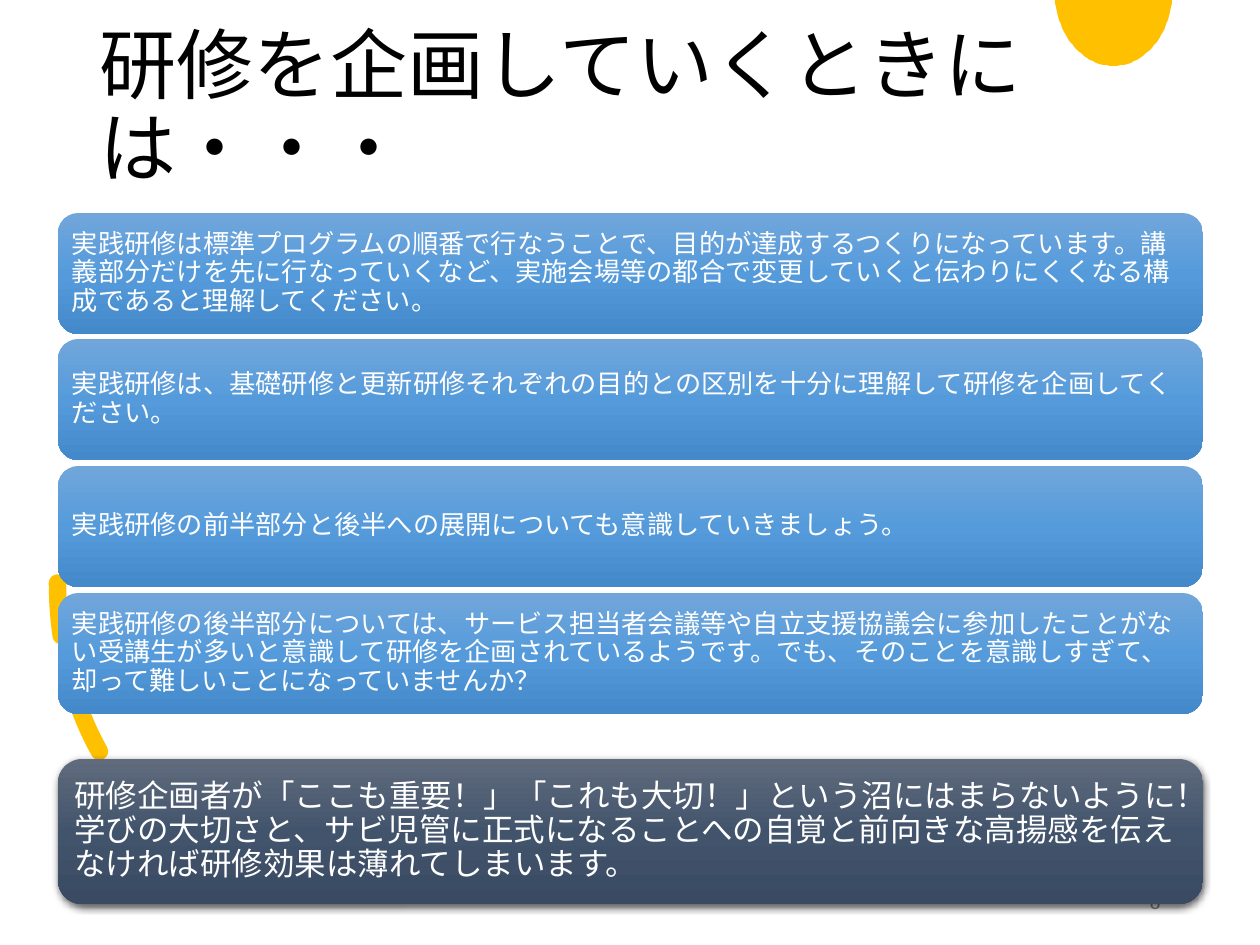
from copy import deepcopy
from dataclasses import dataclass

from lxml import etree
from pptx import Presentation
from pptx.dml.color import RGBColor
from pptx.enum.dml import MSO_LINE
from pptx.enum.shapes import MSO_SHAPE
from pptx.enum.text import MSO_ANCHOR, MSO_AUTO_SIZE, PP_ALIGN
from pptx.oxml.ns import qn
from pptx.util import Pt

ROUNDED = MSO_SHAPE.ROUNDED_RECTANGLE
ARC = MSO_SHAPE.ARC
DASH = MSO_LINE.DASH
MIDDLE = MSO_ANCHOR.MIDDLE
NO_FIT = MSO_AUTO_SIZE.NONE
LEFT, RIGHT = PP_ALIGN.LEFT, PP_ALIGN.RIGHT
TITLE_ONLY = 5
PX = 914400 // 126


@dataclass(frozen=True)
class Theme:
    font: str = "Calibri"
    title_size: int = 44
    point_size: int = 15
    summary_size: int = 18
    number_size: int = 12
    ink: str = "000000"
    white: str = "FFFFFF"
    grey: str = "8C8C8C"
    accent: str = "FFC000"
    blue: tuple = ("71A6DB", "559BDB", "448ACA")
    slate: tuple = ("606B7D", "42546C", "394A62")


def bezier(start, control_1, control_2, end, steps=24):
    """Points along a cubic curve, without its start."""
    for step in range(1, steps + 1):
        t = step / steps
        weights = ((1 - t) ** 3, 3 * t * (1 - t) ** 2, 3 * t * t * (1 - t), t ** 3)
        corners = (start, control_1, control_2, end)
        yield tuple(sum(w * c[axis] for w, c in zip(weights, corners)) for axis in (0, 1))


class SlideBuilder:
    def __init__(self, slide, theme):
        self.slide = slide
        self.theme = theme

    def set_text(self, frame, text, size, color, align=LEFT, inset=None, spacing=0.9):
        frame.text = text
        frame.word_wrap = True
        frame.auto_size = NO_FIT
        frame.vertical_anchor = MIDDLE
        if inset is not None:
            frame.margin_left = frame.margin_right = inset * PX
            frame.margin_top = frame.margin_bottom = inset * PX
        paragraph = frame.paragraphs[0]
        paragraph.alignment = align
        paragraph.line_spacing = spacing
        font = paragraph.runs[0].font
        font.name = self.theme.font
        font.size = Pt(size)
        font.color.rgb = RGBColor.from_string(color)

    def title(self, x, y, w, h, text):
        heading = self.slide.shapes.title
        heading.left, heading.top, heading.width, heading.height = (
            v * PX for v in (x, y, w, h))
        self.set_text(heading.text_frame, text, self.theme.title_size, self.theme.ink)

    def label(self, x, y, w, h, text, size, color, align):
        box = self.slide.shapes.add_textbox(x * PX, y * PX, w * PX, h * PX)
        self.set_text(box.text_frame, text, size, color, align, spacing=1.0)

    def half_disc(self, left, right, rim, bottom):
        middle = (left + right) / 2
        low_right, low_left = middle + 29, middle - 29
        outline = [(right, 0), (right, rim)]
        outline += bezier((right, rim), (right - 5, 39), (low_right, bottom), (middle, bottom))
        outline += bezier((middle, bottom), (low_left, bottom), (left + 5, 39), (left, rim))
        builder = self.slide.shapes.build_freeform(left, 0, scale=PX)
        builder.add_line_segments(outline, close=True)
        disc = builder.convert_to_shape()
        disc.shadow.inherit = False
        disc.fill.solid()
        disc.fill.fore_color.rgb = RGBColor.from_string(self.theme.accent)
        disc.line.fill.background()

    def dashed_arc(self, x, y, w, h, rotation, weight):
        arc = self.slide.shapes.add_shape(ARC, x * PX, y * PX, w * PX, h * PX)
        arc.shadow.inherit = False
        arc.rotation = rotation
        arc.fill.background()
        arc.line.color.rgb = RGBColor.from_string(self.theme.accent)
        arc.line.width = Pt(weight)
        arc.line.dash_style = DASH
        properties = arc._element.spPr
        properties.find(qn("a:xfrm")).set("flipV", "1")
        properties.find(qn("a:ln")).set("cap", "rnd")

    def card(self, x, y, w, h, text, size, colors, inset, shadow=False):
        card = self.slide.shapes.add_shape(ROUNDED, x * PX, y * PX, w * PX, h * PX)
        card.shadow.inherit = False
        card.line.fill.background()
        card.fill.gradient()
        card.fill.gradient_angle = 270
        stop_list = card._element.spPr.find(".//" + qn("a:gsLst"))
        stop_list.append(deepcopy(stop_list[0]))
        for stop, position, color in zip(card.fill.gradient_stops, (0, 0.5, 1), colors):
            stop.position = position
            stop.color.rgb = RGBColor.from_string(color)
        if shadow:
            self.drop_shadow(card)
        self.set_text(card.text_frame, text, size, self.theme.white, inset=inset)

    def drop_shadow(self, shape):
        effects = shape._element.spPr.find(qn("a:effectLst"))
        outer = etree.SubElement(effects, qn("a:outerShdw"), blurRad=str(Pt(4.5)),
                                 dist=str(Pt(1.5)), dir="5400000", rotWithShape="0")
        color = etree.SubElement(outer, qn("a:srgbClr"), val=self.theme.ink)
        etree.SubElement(color, qn("a:alpha"), val="63000")


POINTS = (
    "実践研修は標準プログラムの順番で行なうことで、目的が達成するつくりになっています。"
    "講義部分だけを先に行なっていくなど、実施会場等の都合で変更していくと"
    "伝わりにくくなる構成であると理解してください。",
    "実践研修は、基礎研修と更新研修それぞれの目的との区別を十分に理解して"
    "研修を企画してください。",
    "実践研修の前半部分と後半への展開についても意識していきましょう。",
    "実践研修の後半部分については、サービス担当者会議等や自立支援協議会に"
    "参加したことがない受講生が多いと意識して研修を企画されているようです。"
    "でも、そのことを意識しすぎて、却って難しいことになっていませんか？",
)
SUMMARY = (
    "研修企画者が「ここも重要！」「これも大切！」という沼にはまらないように！"
    "学びの大切さと、サビ児管に正式になることへの自覚と前向きな高揚感を"
    "伝えなければ研修効果は薄れてしまいます。"
)


def main():
    deck = Presentation()
    deck.slide_width, deck.slide_height = 1260 * PX, 945 * PX
    theme = Theme()
    page = SlideBuilder(deck.slides.add_slide(deck.slide_layouts[TITLE_ONLY]), theme)

    # Title and decoration
    page.title(87, 50, 1086, 120, "研修を企画していくときには・・・")
    page.half_disc(1055, 1172, 3, 66)
    page.dashed_arc(-13, 372, 563, 422, rotation=90, weight=10)

    # Four points, evenly stacked
    card_left, card_width = 58, 1145
    first_top, last_top = 213, 593
    for index, point in enumerate(POINTS):
        top = first_top + (last_top - first_top) * index // (len(POINTS) - 1)
        page.card(card_left, top, card_width, 121, point, theme.point_size, theme.blue, 8)

    # Page number, then the summary over it
    page.label(890, 876, 283, 50, "8", theme.number_size, theme.grey, RIGHT)
    page.card(card_left, 759, card_width, 145, SUMMARY, theme.summary_size,
              theme.slate, 9, shadow=True)

    deck.save("out.pptx")


if __name__ == "__main__":
    main()
